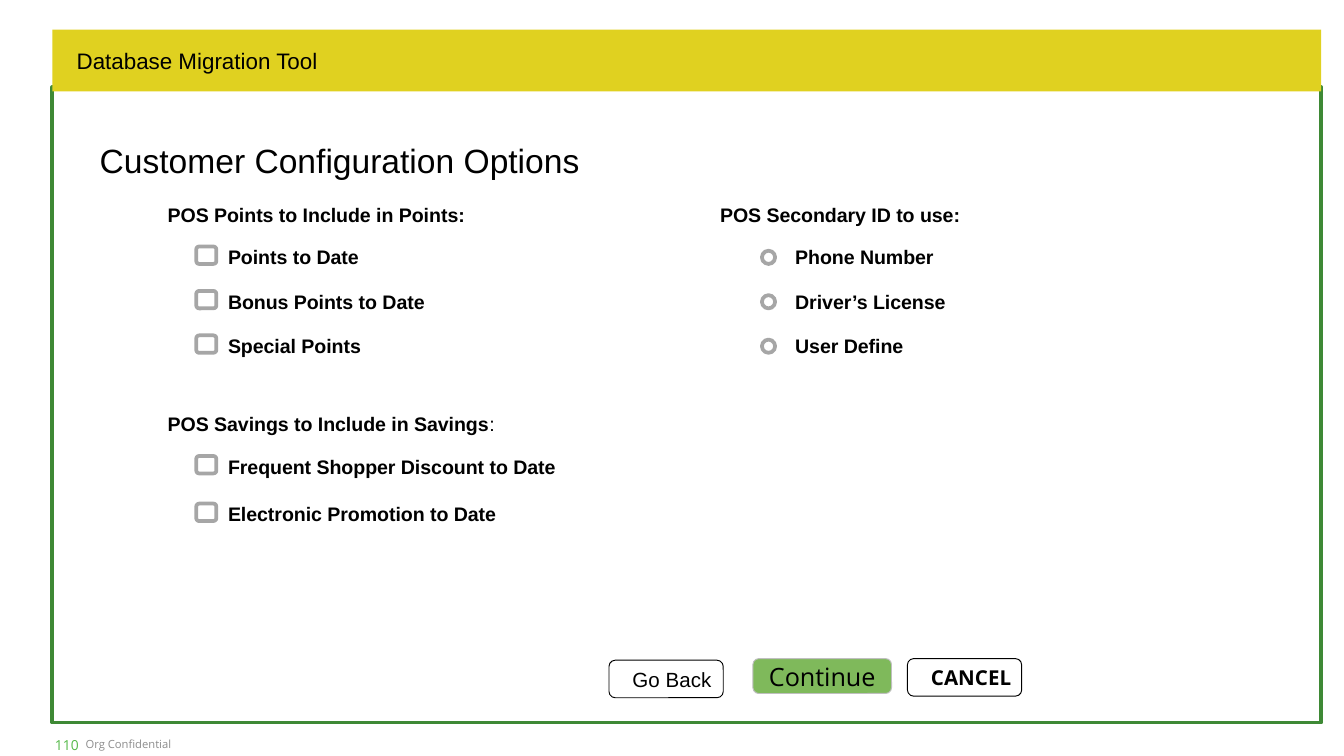
from pptx import Presentation
from pptx import util as u
from pptx.dml import color
from pptx.enum import shapes, text

COLORS = {
    "ink": "000000", "banner": "E0D120", "frame": "3E8935", "mark": "A6A6A6",
    "go": "7FB95B", "go_line": "BFBFBF", "number": "54B948", "footer": "8C8C8C",
}
CHECK = {"kind": shapes.MSO_SHAPE.ROUNDED_RECTANGLE, "size": (0.38, 0.33),
         "mark_at": (0.79, 0.15), "label_x": 1.14}
RADIO = {"kind": shapes.MSO_SHAPE.FLOWCHART_CONNECTOR, "size": (0.25, 0.25),
         "mark_at": (1.04, 0.23), "label_x": 1.42}
LABEL_HEIGHT = 0.71


def rgb(name):
    """Return the named palette colour."""
    return color.RGBColor.from_string(COLORS[name])


def style(run, size, font="Arial", ink="ink", bold=False):
    """Format one run."""
    run.font.size, run.font.name, run.font.bold = u.Pt(size), font, bold
    run.font.color.rgb = rgb(ink)


def write(frame, words, size, align=text.PP_ALIGN.LEFT, **look):
    """Put one formatted paragraph in a text frame and return it."""
    frame.text = words
    paragraph = frame.paragraphs[0]
    paragraph.alignment = align
    style(paragraph.runs[0], size, **look)
    return paragraph


def add_label(slide, box, words, size, **look):
    """Add a wrapping text box and return its paragraph."""
    frame = slide.shapes.add_textbox(*map(u.Cm, box)).text_frame
    frame.word_wrap = True
    return write(frame, words, size, **look)


def add_panel(slide, kind, box, fill=None, line=None, weight=2):
    """Add a flat shape with an optional fill and outline."""
    panel = slide.shapes.add_shape(kind, *map(u.Cm, box))
    panel.shadow.inherit = False
    if fill:
        panel.fill.solid()
        panel.fill.fore_color.rgb = rgb(fill)
    else:
        panel.fill.background()
    if line:
        panel.line.color.rgb = rgb(line)
        panel.line.width = u.Pt(weight)
    else:
        panel.line.fill.background()
    return panel


def add_window(slide, box):
    """Draw the tool window with its banner."""
    left, top, width, height = box
    rectangle = shapes.MSO_SHAPE.RECTANGLE
    add_panel(slide, rectangle, (left, top + 1.09, width, height - 1.09), line="frame")
    banner = add_panel(slide, rectangle, (left, top, width, 1.17), fill="banner")
    banner.text_frame.margin_left = u.Cm(0.46)
    banner.text_frame.vertical_anchor = text.MSO_ANCHOR.MIDDLE
    write(banner.text_frame, "Database Migration Tool", 12)


def add_title(slide, box, words):
    """Place and format the title placeholder."""
    title = slide.shapes.title
    title.left, title.top, title.width, title.height = map(u.Cm, box)
    frame = title.text_frame
    frame.auto_size = text.MSO_AUTO_SIZE.NONE
    frame.vertical_anchor = text.MSO_ANCHOR.TOP
    write(frame, words, 18)


def add_options(slide, box, heading, options, control, step=0.84, bold_colon=True):
    """Place a heading with evenly spaced options below it."""
    left, top, width = box
    paragraph = add_label(slide, (left, top, width, LABEL_HEIGHT), heading, 10.5, bold=True)
    colon = paragraph.add_run()
    colon.text = ":"
    style(colon, 10.5, bold=bold_colon)
    mark_x, mark_y = control["mark_at"]
    label_x = control["label_x"]
    for row, option in enumerate(options):
        y = top + 0.8 + row * step
        add_panel(slide, control["kind"], (left + mark_x, y + mark_y, *control["size"]), line="mark")
        add_label(slide, (left + label_x, y, width - label_x, LABEL_HEIGHT),
                  option, 10.5, bold=True)


def add_button(slide, box, words, size, fill=None, line="ink", inset=0.41,
               align=text.PP_ALIGN.LEFT, **look):
    """Place one rounded button."""
    button = add_panel(slide, shapes.MSO_SHAPE.ROUNDED_RECTANGLE, box, fill, line, 0.5)
    frame = button.text_frame
    frame.word_wrap = False
    frame.margin_left = u.Cm(inset)
    frame.vertical_anchor = text.MSO_ANCHOR.MIDDLE
    write(frame, words, size, align, **look)


def add_buttons(slide, box):
    """Place the row of three buttons."""
    left, top, width, height = box
    side = 2.16
    add_button(slide, (left, top + 0.03, side, height), "Go Back", 11)
    add_button(slide, (left + 2.72, top, 2.62, 0.66), "Continue", 13.5, fill="go",
               line="go_line", inset=0.25, align=text.PP_ALIGN.CENTER, font="Open Sans")
    add_button(slide, (left + width - side, top, side, height), "CANCEL", 11,
               font="Open Sans", bold=True)


def add_footer(slide, box):
    """Place the page number and the confidentiality note."""
    left, top, width, height = box
    number = slide.shapes.add_textbox(*map(u.Cm, (left, top + 0.1, 0.71, height)))
    number.text_frame.margin_left = number.text_frame.margin_top = 0
    write(number.text_frame, "110", 7.4, font="Open Sans", ink="number")
    add_label(slide, (left + 0.33, top, width - 0.33, height), "Org Confidential", 6,
              font="Open Sans", ink="footer")


def main():
    """Build and save the slide."""
    deck = Presentation()
    deck.slide_width, deck.slide_height = u.Cm(25.4), u.Cm(14.29)
    slide = deck.slides.add_slide(deck.slide_layouts[5])
    add_window(slide, (0.99, 0.56, 23.98, 13.1))
    add_title(slide, (1.63, 2.51, 13.79, 1.02), "Customer Configuration Options")
    add_options(slide, (2.92, 3.71, 6.73), "POS Points to Include in Points",
                ["Points to Date", "Bonus Points to Date", "Special Points"], CHECK)
    add_options(slide, (2.92, 7.67, 7.98), "POS Savings to Include in Savings",
                ["Frequent Shopper Discount to Date", "Electronic Promotion to Date"],
                CHECK, step=0.9, bold_colon=False)
    add_options(slide, (13.36, 3.71, 5.49), "POS Secondary ID to use",
                ["Phone Number", "Driver’s License", "User Define"], RADIO)
    add_buttons(slide, (11.51, 12.45, 7.8, 0.71))
    add_footer(slide, (1.04, 13.82, 8.92, 0.53))
    deck.save("out.pptx")


if __name__ == "__main__":
    main()
